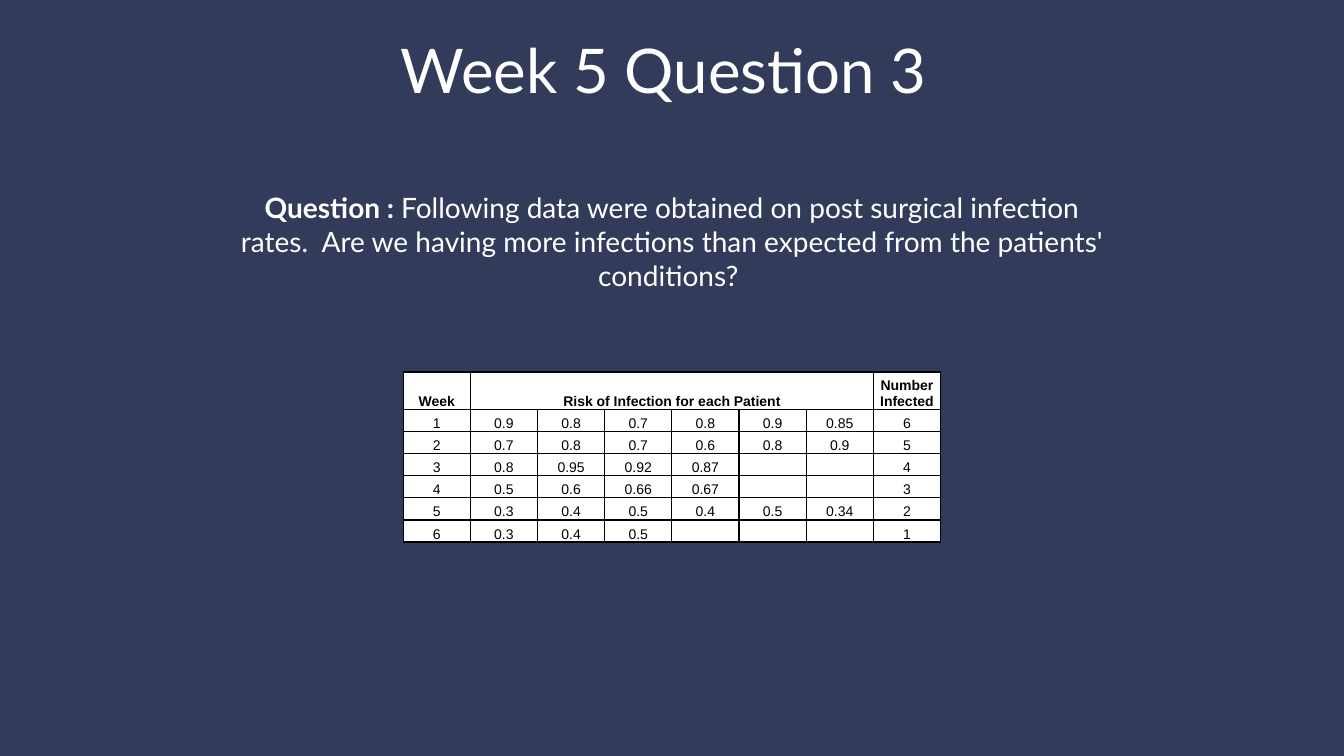
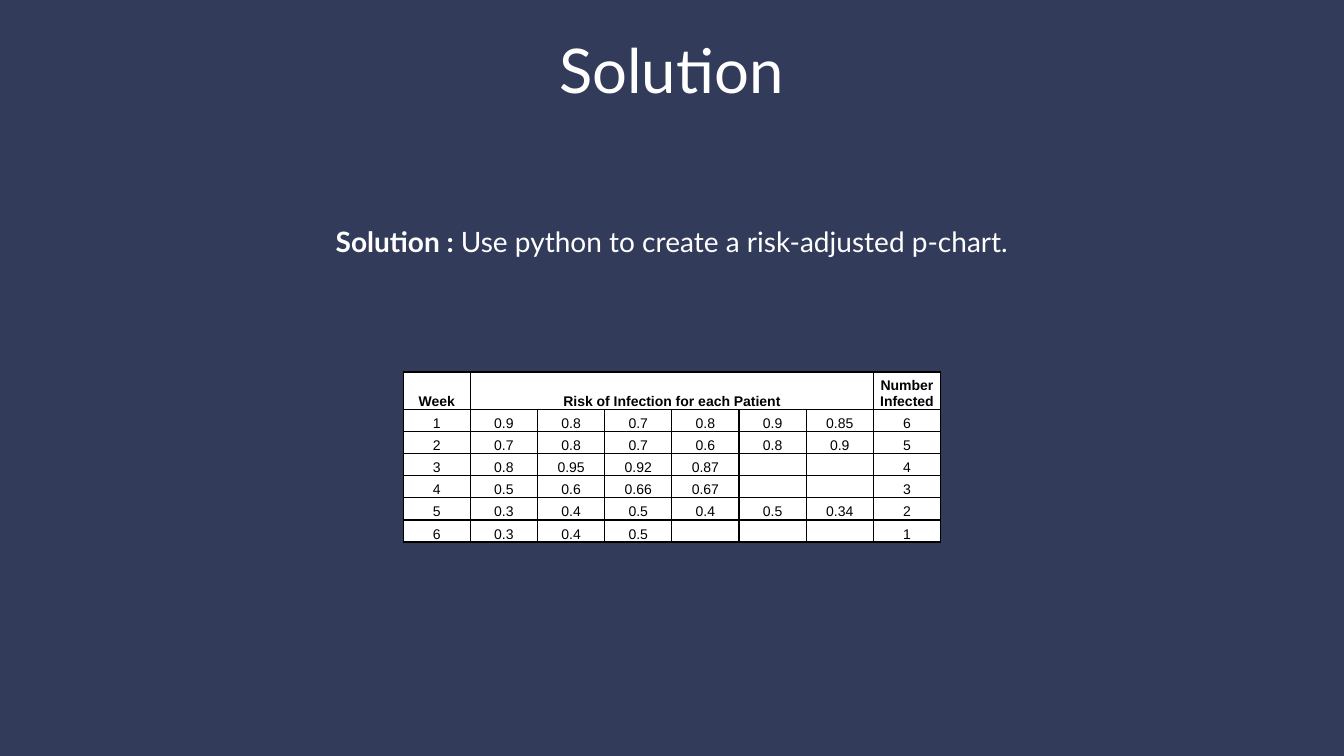
from dataclasses import dataclass

from lxml import etree
from pptx import Presentation
from pptx.dml.color import RGBColor
from pptx.enum.text import MSO_ANCHOR, MSO_AUTO_SIZE, PP_ALIGN
from pptx.oxml.ns import qn
from pptx.util import Inches, Pt

CENTER = PP_ALIGN.CENTER
TOP, MIDDLE, BOTTOM = MSO_ANCHOR.TOP, MSO_ANCHOR.MIDDLE, MSO_ANCHOR.BOTTOM
NO_FIT = MSO_AUTO_SIZE.NONE
SLIDE_W, SLIDE_H = Inches(13.33), Inches(7.5)


@dataclass(frozen=True)
class Theme:
    """Colours, fonts and type sizes shared by the slides."""
    navy: str = "333B5B"
    white: str = "FFFFFF"
    black: str = "000000"
    text_font: str = "Lato"
    table_font: str = "Arial"
    title_size: int = 44
    body_size: int = 20
    table_size: int = 10
    border: float = 1


THEME = Theme()
TITLE_BOX = (7.13, 3.6, 85.67, 11.2)
TABLE_BOX = (30, 49.2, 40, 22.53)
BODY_CENTER = (50, 31.93)
ROW_SHARE = 0.13

HEADERS = ["Week", "Risk of Infection for each Patient", "Number Infected"]
RISKS = [
    ["0.9", "0.8", "0.7", "0.8", "0.9", "0.85"],
    ["0.7", "0.8", "0.7", "0.6", "0.8", "0.9"],
    ["0.8", "0.95", "0.92", "0.87"],
    ["0.5", "0.6", "0.66", "0.67"],
    ["0.3", "0.4", "0.5", "0.4", "0.5", "0.34"],
    ["0.3", "0.4", "0.5"],
]
INFECTED = ["6", "5", "4", "3", "2", "1"]
PATIENTS = max(map(len, RISKS))

SLIDES = [
    ("Week 5 Question 3 ", "Question : ",
     "Following data were obtained on post surgical infection rates.  Are we "
     "having more infections than expected from the patients' conditions? ",
     (66.4, 14.8)),
    ("Solution", "Solution : ",
     "Use python to create a risk-adjusted p-chart.", (64.52, 5.87)),
]


def to_lengths(box):
    """Turn a box in percent of the slide into lengths."""
    return [int(share * side / 100)
            for share, side in zip(box, (SLIDE_W, SLIDE_H) * 2)]


def style_paragraph(p, font, size, color):
    """Centre a paragraph and set its font."""
    p.alignment = CENTER
    p.font.name = font
    p.font.size = Pt(size)
    p.font.color.rgb = RGBColor.from_string(color)


def place_text(sp, box, anchor, size, runs):
    """Place a placeholder and write its (text, bold) runs."""
    sp.left, sp.top, sp.width, sp.height = to_lengths(box)
    tf = sp.text_frame
    tf.word_wrap = True
    tf.auto_size = NO_FIT
    tf.vertical_anchor = anchor
    p = tf.paragraphs[0]
    style_paragraph(p, THEME.text_font, size, THEME.white)
    p.space_before = Pt(0)
    for text, bold in runs:
        r = p.add_run()
        r.text = text
        r.font.bold = bold
    return p


def add_title(s, text):
    """Write the slide title."""
    place_text(s.shapes.title, TITLE_BOX, TOP, THEME.title_size, [(text, False)])


def add_body(s, lead, text, size):
    """Write the statement, centred on its spot and without a bullet."""
    w, h = size
    x, y = BODY_CENTER
    box = (x - w / 2, y - h / 2, w, h)
    p = place_text(s.placeholders[1], box, MIDDLE, THEME.body_size,
                   [(lead, True), (text, False)])
    pPr = p._p.get_or_add_pPr()
    pPr.set("marL", "0")
    pPr.set("indent", "0")
    bullet = etree.Element(qn("a:buNone"))
    pPr.find(qn("a:defRPr")).addprevious(bullet)


def add_borders(cell):
    """Draw a thin line on each side of a cell."""
    tcPr = cell._tc.get_or_add_tcPr()
    for side in ("lnL", "lnR", "lnT", "lnB"):
        ln = etree.SubElement(tcPr, qn(f"a:{side}"), w=str(Pt(THEME.border)))
        fill = etree.SubElement(ln, qn("a:solidFill"))
        etree.SubElement(fill, qn("a:srgbClr"), val=THEME.black)


def fill_cell(cell, text, bold):
    """Write and format one table cell."""
    add_borders(cell)
    cell.fill.solid()
    cell.fill.fore_color.rgb = RGBColor.from_string(THEME.white)
    cell.margin_left = cell.margin_right = 0
    cell.margin_top = cell.margin_bottom = 0
    cell.vertical_anchor = BOTTOM
    cell.text = text
    p = cell.text_frame.paragraphs[0]
    style_paragraph(p, THEME.table_font, THEME.table_size, THEME.black)
    p.font.bold = bold
    if not text:
        p._p.get_or_add_endParaRPr().set("sz", str(THEME.table_size * 100))


def add_risk_table(s, box):
    """Add the table of infection risks by week."""
    week, risk, infected = HEADERS
    rows = [[week, risk] + [""] * (PATIENTS - 1) + [infected]]
    for i, (risks, count) in enumerate(zip(RISKS, INFECTED), 1):
        rows.append([str(i)] + risks + [""] * (PATIENTS - len(risks)) + [count])
    x, y, w, h = to_lengths(box)
    table = s.shapes.add_table(len(rows), len(rows[0]), x, y, w, h).table
    table.first_row = table.horz_banding = False
    header_share = 1 - ROW_SHARE * len(RISKS)
    for i, row in enumerate(rows):
        table.rows[i].height = int(h * (ROW_SHARE if i else header_share))
        for j, text in enumerate(row):
            fill_cell(table.cell(i, j), text, i == 0)
    table.cell(0, 1).merge(table.cell(0, PATIENTS))


def add_question_slide(prs, title, lead, text, size):
    """Add a slide with a title, a statement and the risk table."""
    s = prs.slides.add_slide(prs.slide_layouts[1])
    add_title(s, title)
    add_risk_table(s, TABLE_BOX)
    add_body(s, lead, text, size)


def main():
    """Build and save the presentation."""
    prs = Presentation()
    prs.slide_width, prs.slide_height = SLIDE_W, SLIDE_H
    fill = prs.slide_master.background.fill
    fill.solid()
    fill.fore_color.rgb = RGBColor.from_string(THEME.navy)
    for content in SLIDES:
        add_question_slide(prs, *content)
    prs.save("out.pptx")


if __name__ == "__main__":
    main()
